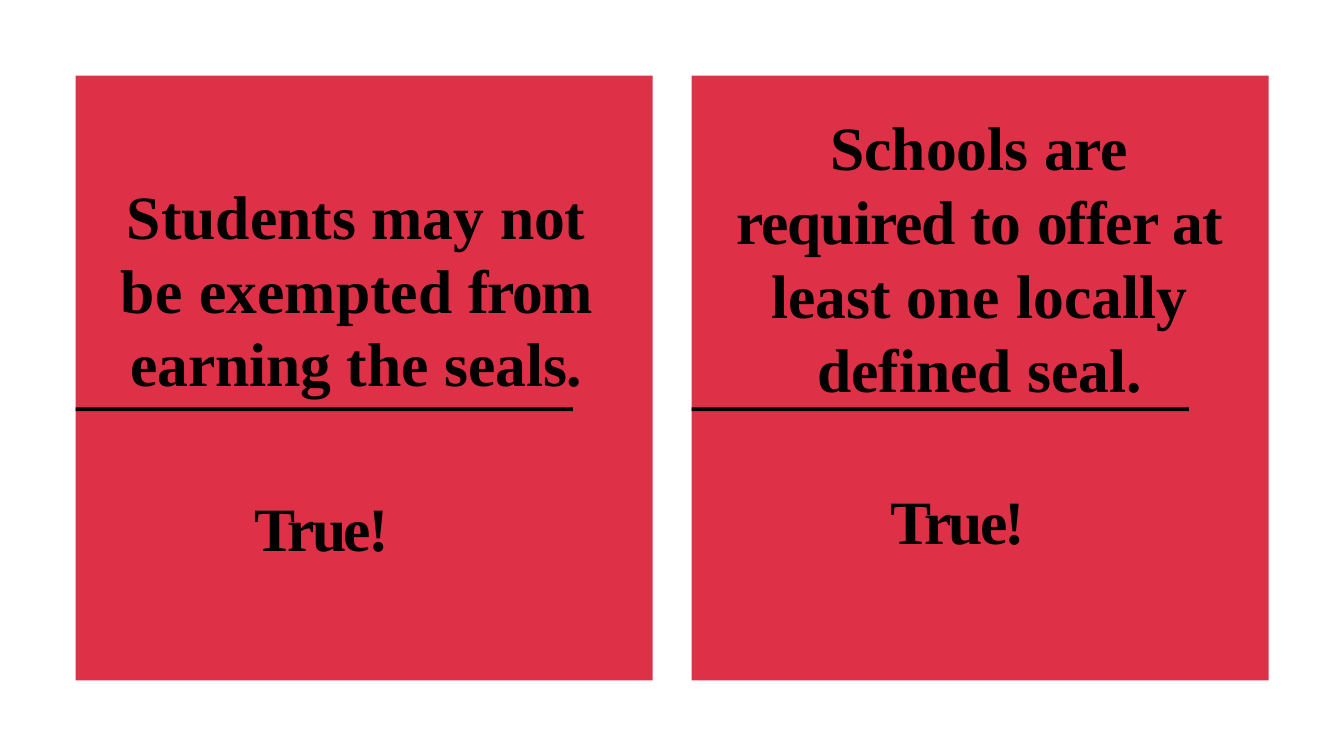
from lxml.etree import SubElement
from pptx import Presentation
from pptx.dml.color import RGBColor
from pptx.enum.shapes import MSO_SHAPE
from pptx.enum.text import MSO_AUTO_SIZE, PP_ALIGN
from pptx.oxml.ns import qn
from pptx.util import Cm, Pt

FONT = "Times New Roman"
RED = "DE3147"
BLACK = "000000"
CARD_TOP, CARD_WIDTH, CARD_HEIGHT = 2.86, 21.81, 22.86
RULE_TOP, RULE_WIDTH, RULE_HEIGHT = 15.4, 18.8, 0.14
ANSWER = [("True!", -3)]

CARDS = [
    {
        "left": 2.86,
        "statement_box": (4.45, 6.65, 18.01, 8.43),
        "statement": [
            ("Students may ", 0), ("not ", -0.2), ("be ", 0.6),
            ("exempted ", 0), ("from ", -1.4), ("earning ", -0.1),
            ("the ", 0), ("seals.", -0.1),
        ],
        "answer_box": (9.58, 18.49, 6.12, 2.87),
    },
    {
        "left": 26.14,
        "statement_box": (27.79, 4.06, 18.44, 11.23),
        "statement": [
            ("Schools ", 0), ("are ", -0.2), ("required ", -1.1),
            ("to ", 0), ("offer ", -1.1), ("at ", -0.6),
            ("least\t", -0.2), ("one ", 0.8), ("locally ", -0.1),
            ("defined ", 0), ("seal.", -0.1),
        ],
        "tab": 5.13,
        "answer_box": (33.63, 18.21, 6.12, 2.87),
    },
]


def color(value):
    return RGBColor.from_string(value)


def add_block(slide, left, top, width, height, fill):
    shape = slide.shapes.add_shape(
        MSO_SHAPE.RECTANGLE, Cm(left), Cm(top), Cm(width), Cm(height)
    )
    shape.shadow.inherit = False
    shape.fill.solid()
    shape.fill.fore_color.rgb = color(fill)
    shape.line.fill.background()


def add_text(slide, box, words, inset, space_before):
    text_box = slide.shapes.add_textbox(*(Cm(length) for length in box))
    frame = text_box.text_frame
    frame.word_wrap = True
    frame.auto_size = MSO_AUTO_SIZE.SHAPE_TO_FIT_TEXT
    frame.margin_left = frame.margin_right = frame.margin_bottom = 0
    frame.margin_top = Cm(inset)
    paragraph = frame.paragraphs[0]
    paragraph.space_before = Pt(space_before)
    for text, spacing in words:
        run = paragraph.add_run()
        run.text = text
        run.font.name = FONT
        run.font.size = Pt(66)
        run.font.bold = True
        run.font.color.rgb = color(BLACK)
        run.font._element.set("spc", str(round(spacing * 100)))
    return paragraph


def set_indent(paragraph, margin, first_line):
    properties = paragraph._p.get_or_add_pPr()
    properties.set("marL", str(Cm(margin)))
    properties.set("indent", str(Cm(first_line)))


def add_tab_stop(paragraph, position):
    tabs = SubElement(paragraph._p.get_or_add_pPr(), qn("a:tabLst"))
    SubElement(tabs, qn("a:tab"), pos=str(Cm(position)), algn="l")


def add_statement(slide, card):
    paragraph = add_text(slide, card["statement_box"], card["statement"], 0.08, 2)
    paragraph.alignment = PP_ALIGN.CENTER
    paragraph.line_spacing = Pt(79)
    set_indent(paragraph, 0.03, -0.64)
    if "tab" in card:
        add_tab_stop(paragraph, card["tab"])


def add_answer(slide, card):
    paragraph = add_text(slide, card["answer_box"], ANSWER, 0.03, 1)
    set_indent(paragraph, 0.03, 0)


def main():
    presentation = Presentation()
    presentation.slide_width = Cm(50.8)
    presentation.slide_height = Cm(28.58)
    slide = presentation.slides.add_slide(presentation.slide_layouts[6])
    for card in CARDS:
        left = card["left"]
        add_block(slide, left, CARD_TOP, CARD_WIDTH, CARD_HEIGHT, RED)
        add_block(slide, left, RULE_TOP, RULE_WIDTH, RULE_HEIGHT, BLACK)
        add_statement(slide, card)
        add_answer(slide, card)
    presentation.save("out.pptx")


if __name__ == "__main__":
    main()
